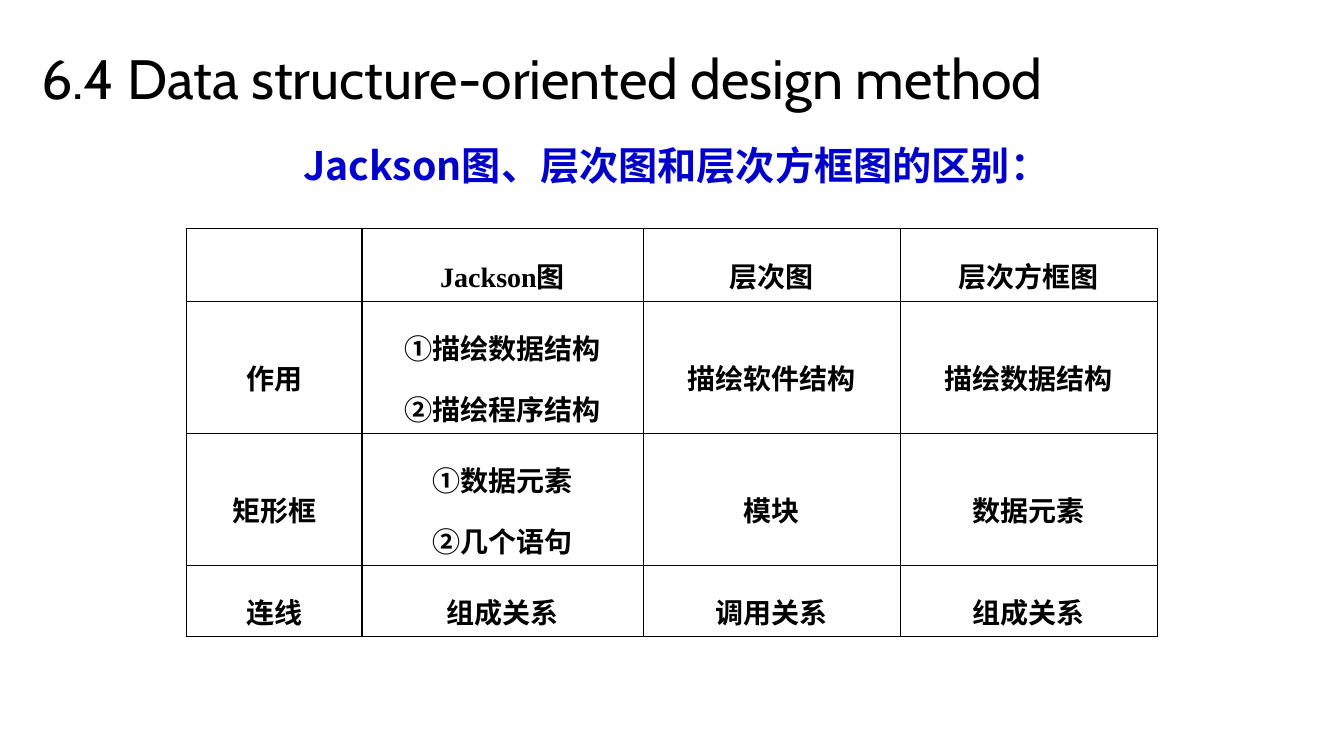
from lxml.etree import SubElement
from pptx import Presentation
from pptx.dml.color import RGBColor
from pptx.enum.text import MSO_ANCHOR, PP_ALIGN
from pptx.oxml import parse_xml
from pptx.oxml.ns import nsdecls, qn
from pptx.util import Inches, Pt

HUES = {"ink": "000000", "blue": "0000CC"}
HAN = "Noto Sans CJK SC"
HEAD = {"name": "Cabin", "size": Pt(39.6), "bold": False}
SUB = {"name": HAN, "size": Pt(28), "bold": True}
CELL = {"name": "Times New Roman", "size": Pt(20), "bold": True}
COLS = (1.74, 2.79, 2.55, 2.55)
ROWS = (0.72, 0.94, 0.79, 0.59)
DATA = (
    ("", "Jackson图", "层次图", "层次方框图"),
    ("作用", "①描绘数据结构\n②描绘程序结构", "描绘软件结构", "描绘数据结构"),
    ("矩形框", "①数据元素\n②几个语句", "模块", "数据元素"),
    ("连线", "组成关系", "调用关系", "组成关系"),
)


class Deck:
    """Holds the style and the current slide."""

    def __init__(self):
        self.show = Presentation()
        self.show.slide_width = Inches(13.33)
        self.show.slide_height = Inches(7.5)
        self.slide = self.show.slides.add_slide(self.show.slide_layouts[6])

    def fill_text(self, frame, text, font, hue="ink", lead=0.9, align=PP_ALIGN.LEFT, hang=0):
        frame.word_wrap = True
        frame.text = text
        for para in frame.paragraphs:
            para.alignment = align
            para.line_spacing = lead
            if hang:
                props = para._p.get_or_add_pPr()
                props.set("marL", str(Inches(hang)))
                props.set("indent", str(-Inches(hang)))
            for run in para.runs:
                for key, value in font.items():
                    setattr(run.font, key, value)
                run.font.color.rgb = RGBColor.from_string(HUES[hue])
                SubElement(run._r.get_or_add_rPr(), qn("a:ea")).set("typeface", HAN)

    def label(self, box, text, font, anchor=MSO_ANCHOR.TOP, **style):
        frame = self.slide.shapes.add_textbox(*map(Inches, box)).text_frame
        frame.vertical_anchor = anchor
        self.fill_text(frame, text, font, **style)

    def border(self, cell):
        props = cell._tc.get_or_add_tcPr()
        for spot, side in enumerate("LRTB"):
            props.insert(spot, parse_xml(
                f'<a:ln{side} {nsdecls("a")} w="{Pt(1)}"><a:solidFill>'
                f'<a:srgbClr val="{HUES["ink"]}"/></a:solidFill></a:ln{side}>'))

    def table(self, left, top, data):
        size = map(Inches, (left, top, sum(COLS), sum(ROWS)))
        grid = self.slide.shapes.add_table(len(ROWS), len(COLS), *size).table
        grid.first_row = grid.horz_banding = False
        for col, width in zip(grid.columns, COLS):
            col.width = Inches(width)
        for row, height, words in zip(grid.rows, ROWS, data):
            row.height = Inches(height)
            for spot, (cell, text) in enumerate(zip(row.cells, words)):
                cell.vertical_anchor = MSO_ANCHOR.MIDDLE
                cell.fill.background()
                self.border(cell)
                if text:
                    self.fill_text(cell.text_frame, text, CELL, lead=1.5,
                                   align=PP_ALIGN.CENTER, hang=0.38 if spot == 3 else 0)


def main():
    deck = Deck()
    deck.table(1.85, 2.27, DATA)
    deck.label((2.91, 1.41, 8, 0.63), "Jackson图、层次图和层次方框图的区别：",
               SUB, hue="blue", hang=0.25)
    deck.label((0.31, 0.43, 12.2, 0.75), "6.4 Data structure-oriented design method",
               HEAD, anchor=MSO_ANCHOR.MIDDLE)
    deck.show.save("out.pptx")


if __name__ == "__main__":
    main()
